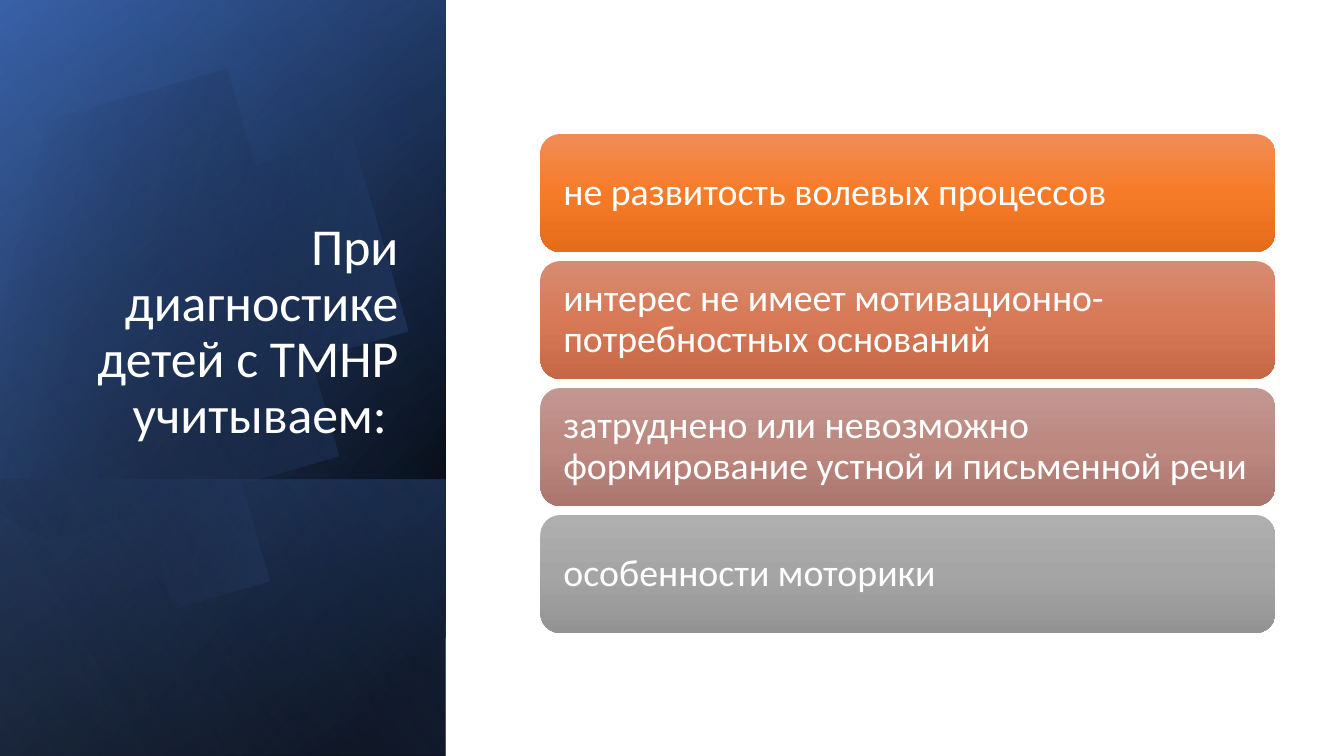
import math

from lxml import etree
from pptx import Presentation
from pptx import util as u
from pptx.dml.color import RGBColor
from pptx.enum import shapes, text
from pptx.oxml import ns

COLUMNS, ROWS = 13.33, 7.5  # grid of one-inch cells
PANEL_WIDTH = 4.42
CARD_LEFT, CARD_TOP, CARD_WIDTH, CARD_HEIGHT, CARD_STEP = 5.36, 1.33, 7.29, 1.17, 1.26

CARDS = [
    ("не развитость волевых процессов", ("F18C57", "F67B28", "E56C19")),
    ("интерес не имеет мотивационно-потребностных оснований",
     ("D78B72", "D77956", "C66846")),
    ("затруднено или невозможно формирование устной и письменной речи",
     ("C19791", "BC8880", "AA766E")),
    ("особенности моторики", ("AFAFAF", "A5A5A5", "939393")),
]

# Disc outline: start, then Bezier curves (two controls and an end) or line ends
DISC_START = (1.49, 1.1)
DISC_STEPS = [
    [(2.46, 1.12), (3.35, 1.77), (3.63, 2.75)],
    [(3.98, 3.97), (3.28, 5.23), (2.07, 5.58)],
    [(1.31, 5.8), (0.53, 5.61), (-0.03, 5.14)],
    [(-0.15, 5.03)],
    [(-0.15, 1.75)],
    [(0, 1.61)],
    [(0.23, 1.42), (0.5, 1.28), (0.8, 1.19)],
    [(1.03, 1.13), (1.26, 1.1), (1.49, 1.1)],
]
DISC_CENTRE = (1.58, 3.34)
DISC_TILT = -16.1


def color(hex_value):
    return RGBColor.from_string(hex_value)


def curve_points(start, steps, pieces=24):
    """Flatten curves and lines into a list of points."""
    points = [start]
    for step in steps:
        if len(step) == 1:
            points.append(step[0])
            continue
        corners = [points[-1], *step]
        for i in range(1, pieces + 1):
            t = i / pieces
            weights = [math.comb(3, k) * t**k * (1 - t)**(3 - k) for k in range(4)]
            points.append(tuple(sum(w * c[axis] for w, c in zip(weights, corners))
                                for axis in (0, 1)))
    return points


def turn(point, centre, degrees):
    angle = math.radians(degrees)
    dx, dy = point[0] - centre[0], point[1] - centre[1]
    return (centre[0] + dx * math.cos(angle) - dy * math.sin(angle),
            centre[1] + dx * math.sin(angle) + dy * math.cos(angle))


class Deck:
    font = "Calibri"
    ink = "FFFFFF"

    def __init__(self):
        self.prs = Presentation()
        self.prs.slide_width, self.prs.slide_height = u.Inches(COLUMNS), u.Inches(ROWS)
        self.slide = self.prs.slides.add_slide(self.prs.slide_layouts[6])

    def paint(self, shape, stops, angle):
        """Gradient from (position %, colour, opacity %) stops; no line, no shadow."""
        shape.shadow.inherit = False
        shape.line.fill.background()
        properties = shape._element.spPr
        gradient = etree.Element(ns.qn("a:gradFill"), rotWithShape="1")
        stop_list = etree.SubElement(gradient, ns.qn("a:gsLst"))
        for position, hex_value, opacity in stops:
            stop = etree.SubElement(stop_list, ns.qn("a:gs"), pos=str(position * 1000))
            tone = etree.SubElement(stop, ns.qn("a:srgbClr"), val=hex_value)
            if opacity < 100:
                etree.SubElement(tone, ns.qn("a:alpha"), val=str(opacity * 1000))
        etree.SubElement(gradient, ns.qn("a:lin"), ang=str(angle * 60000), scaled="0")
        properties.insert(2, gradient)  # after position and geometry

    def put_text(self, shape, words, size, align, anchor, margins=(0.1, 0.05)):
        frame = shape.text_frame
        frame.word_wrap = True
        frame.vertical_anchor = anchor
        frame.margin_left = frame.margin_right = u.Inches(margins[0])
        frame.margin_top = frame.margin_bottom = u.Inches(margins[1])
        paragraph = frame.paragraphs[0]
        paragraph.alignment = align
        paragraph.line_spacing = 0.9
        run = paragraph.add_run()
        run.text = words
        run.font.name, run.font.size = self.font, u.Pt(size)
        run.font.color.rgb = color(self.ink)

    def block(self, kind, left, top, width, height):
        return self.slide.shapes.add_shape(
            kind, *(u.Inches(n) for n in (left, top, width, height)))

    def panel(self, top, stops, angle):
        """Side panel from the given row to the slide's foot, turned and mirrored."""
        height = ROWS - top
        panel = self.block(shapes.MSO_SHAPE.RECTANGLE, (PANEL_WIDTH - height) / 2,
                           top + (height - PANEL_WIDTH) / 2, height, PANEL_WIDTH)
        panel.rotation = 90
        panel._element.spPr.xfrm.set("flipH", "1")
        self.paint(panel, stops, angle)

    def disc(self, stops, angle):
        outline = [turn(point, DISC_CENTRE, -DISC_TILT)
                   for point in curve_points(DISC_START, DISC_STEPS)]
        builder = self.slide.shapes.build_freeform(*outline[0], scale=u.Inches(1))
        builder.add_line_segments(outline[1:], close=True)
        disc = builder.convert_to_shape()
        disc.rotation = DISC_TILT
        self.paint(disc, stops, angle)

    def title(self, words, left, top, width, height):
        title = self.slide.shapes.add_textbox(
            *(u.Inches(n) for n in (left, top, width, height)))
        self.put_text(title, words, size=37, align=text.PP_ALIGN.RIGHT,
                      anchor=text.MSO_ANCHOR.BOTTOM)

    def card(self, row, words, tones):
        card = self.block(shapes.MSO_SHAPE.ROUNDED_RECTANGLE, CARD_LEFT,
                          CARD_TOP + row * CARD_STEP, CARD_WIDTH, CARD_HEIGHT)
        self.paint(card, [(50 * i, tone, 100) for i, tone in enumerate(tones)], 90)
        self.put_text(card, words, size=27, align=text.PP_ALIGN.LEFT,
                      anchor=text.MSO_ANCHOR.MIDDLE, margins=(0.17, 0.16))


def main():
    deck = Deck()

    # Side panel: layered gradients with a faint disc
    deck.panel(0, [(8, "000000", 100), (100, "2F5597", 100)], 50)
    deck.panel(0, [(0, "000000", 0), (99, "4472C4", 46)], 30)
    deck.panel(4.76, [(2, "4472C4", 29), (100, "000000", 30)], 130)
    deck.disc([(29, "000000", 0), (100, "4472C4", 43)], 30)
    deck.panel(0, [(0, "000000", 0), (99, "8FAADC", 11)], 120)

    # Title
    deck.title("При диагностике детей с ТМНР учитываем: ", 0.64, 1.84, 3.41, 2.62)

    # Cards
    for row, (words, tones) in enumerate(CARDS):
        deck.card(row, words, tones)

    deck.prs.save("out.pptx")


if __name__ == "__main__":
    main()
